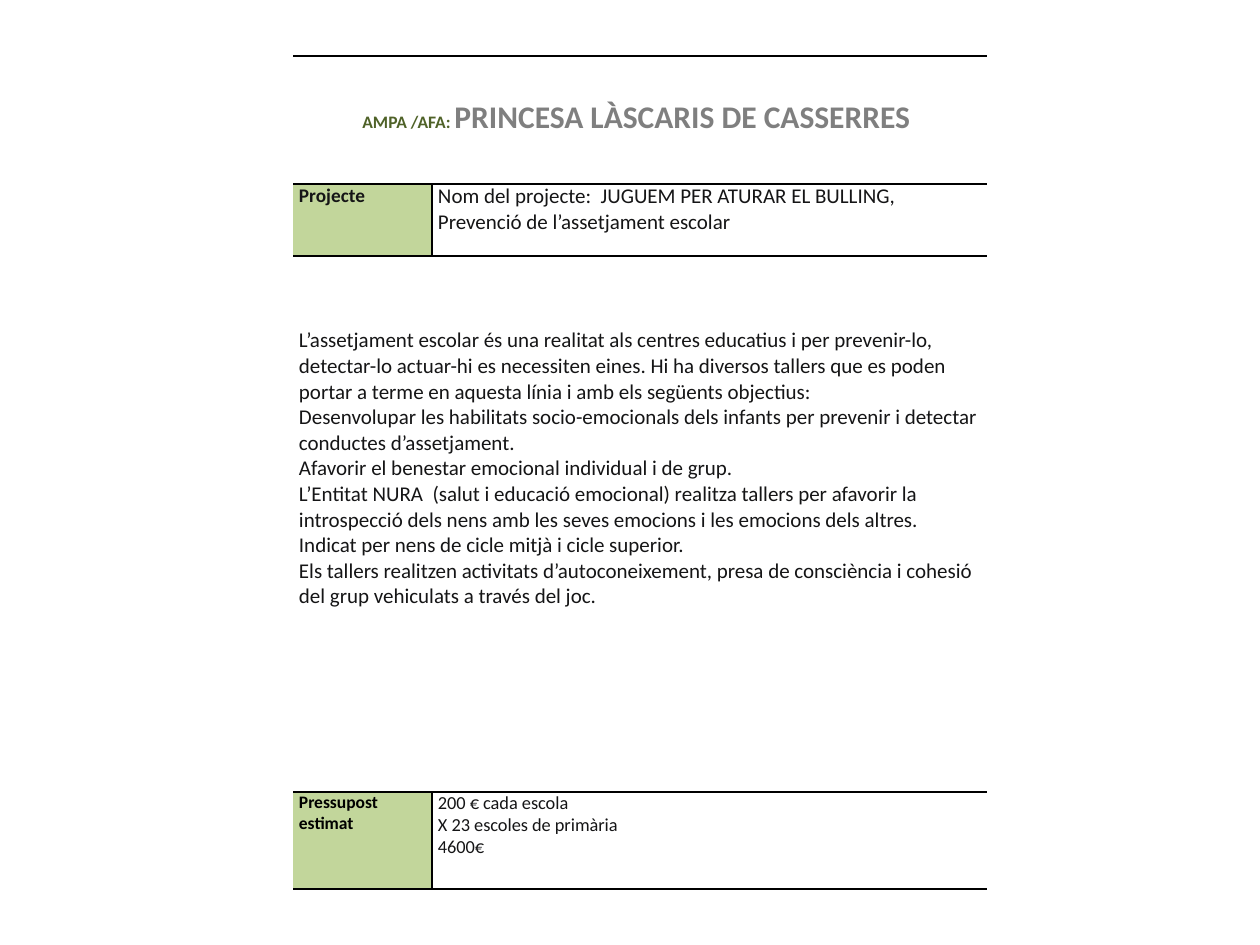
from pptx import Presentation
from pptx.util import Pt
from pptx.dml.color import RGBColor
from pptx.enum.text import PP_ALIGN
from pptx.oxml.ns import qn
from lxml.etree import SubElement

SCALE = 914400 / 126
COLORS = {
    "ink": "151516", "black": "000000", "green": "C2D69B",
    "olive": "4F6228", "gray": "7F7F7F",
}
GOALS = [
    "L’assetjament escolar és una realitat als centres educatius i per prevenir-lo, "
    "detectar-lo actuar-hi es necessiten eines. Hi ha diversos tallers que es poden "
    "portar a terme en aquesta línia i amb els següents objectius:",
    "Desenvolupar les habilitats socio-emocionals dels infants per prevenir i detectar "
    "conductes d’assetjament.",
    "Afavorir el benestar emocional individual i de grup.",
    "L’Entitat NURA  (salut i educació emocional) realitza tallers per afavorir la "
    "introspecció dels nens amb les seves emocions i les emocions dels altres.",
    "Indicat per nens de cicle mitjà i cicle superior.",
    "Els tallers realitzen activitats d’autoconeixement, presa de consciència i cohesió "
    "del grup vehiculats a través del joc.",
]
COSTS = ["200 € cada escola", "X 23 escoles de primària", "4600€"]


def px(n):
    return round(n * SCALE)


def style(font, size, color="ink", bold=False):
    font.name = "Calibri"
    font.size = Pt(size)
    font.bold = bold
    font.color.rgb = RGBColor.from_string(COLORS[color])


def edge(cell, sides):
    """Draw the named sides (of L, R, T, B) and hide the others."""
    props = cell._tc.get_or_add_tcPr()
    for side in "LRTB":
        line = SubElement(props, qn(f"a:ln{side}"), w=str(Pt(1)))
        if side in sides:
            fill = SubElement(line, qn("a:solidFill"))
            SubElement(fill, qn("a:srgbClr"), val=COLORS["black"])
        else:
            SubElement(line, qn("a:noFill"))


def prep(cell, sides, fill=None):
    cell.margin_left = cell.margin_right = px(6)
    cell.margin_top = cell.margin_bottom = 0
    edge(cell, sides)
    if fill:
        cell.fill.solid()
        cell.fill.fore_color.rgb = RGBColor.from_string(COLORS[fill])
    else:
        cell.fill.background()


def write(cell, lines, size, color="ink", bold=False):
    cell.text_frame.text = "\n".join(lines)
    for para in cell.text_frame.paragraphs:
        for run in para.runs:
            style(run.font, size, color, bold)


def title(cell):
    cell.margin_top = px(43)
    para = cell.text_frame.paragraphs[0]
    para.alignment = PP_ALIGN.CENTER
    for text, size, color in [
        ("AMPA /AFA: ", 10, "olive"),
        ("PRINCESA LÀSCARIS DE CASSERRES ", 18, "gray"),
    ]:
        run = para.add_run()
        run.text = text
        style(run.font, size, color, True)


def sheet(slide, left, top, cols, rows):
    """Place the project form as one table."""
    frame = slide.shapes.add_table(
        len(rows), len(cols), px(left), px(top), px(sum(cols)), px(sum(rows)))
    table = frame.table
    table.first_row = table.horz_banding = False
    for col, width in zip(table.columns, cols):
        col.width = px(width)
    for row, height in zip(table.rows, rows):
        row.height = px(height)

    for r in (0, 2):
        for c in (0, 1):
            prep(table.cell(r, c), "TB")
        table.cell(r, 0).merge(table.cell(r, 1))
    for r in (1, 3):
        prep(table.cell(r, 0), "RTB", "green")
        prep(table.cell(r, 1), "LTB")

    title(table.cell(0, 0))
    write(table.cell(1, 0), ["Projecte"], 11, bold=True)
    write(table.cell(1, 1), [
        "Nom del projecte:  JUGUEM PER ATURAR EL BULLING, "
        "Prevenció de l’assetjament escolar"], 12)
    table.cell(2, 0).margin_top = px(72)
    write(table.cell(2, 0), GOALS, 12)
    write(table.cell(3, 0), ["Pressupost estimat"], 10, "black", True)
    write(table.cell(3, 1), COSTS, 10.5)


def main():
    deck = Presentation()
    deck.slide_width, deck.slide_height = px(1260), px(945)
    slide = deck.slides.add_slide(deck.slide_layouts[6])
    sheet(slide, 293, 56, [139, 555], [128, 72, 536, 97])
    deck.save("out.pptx")


if __name__ == "__main__":
    main()
